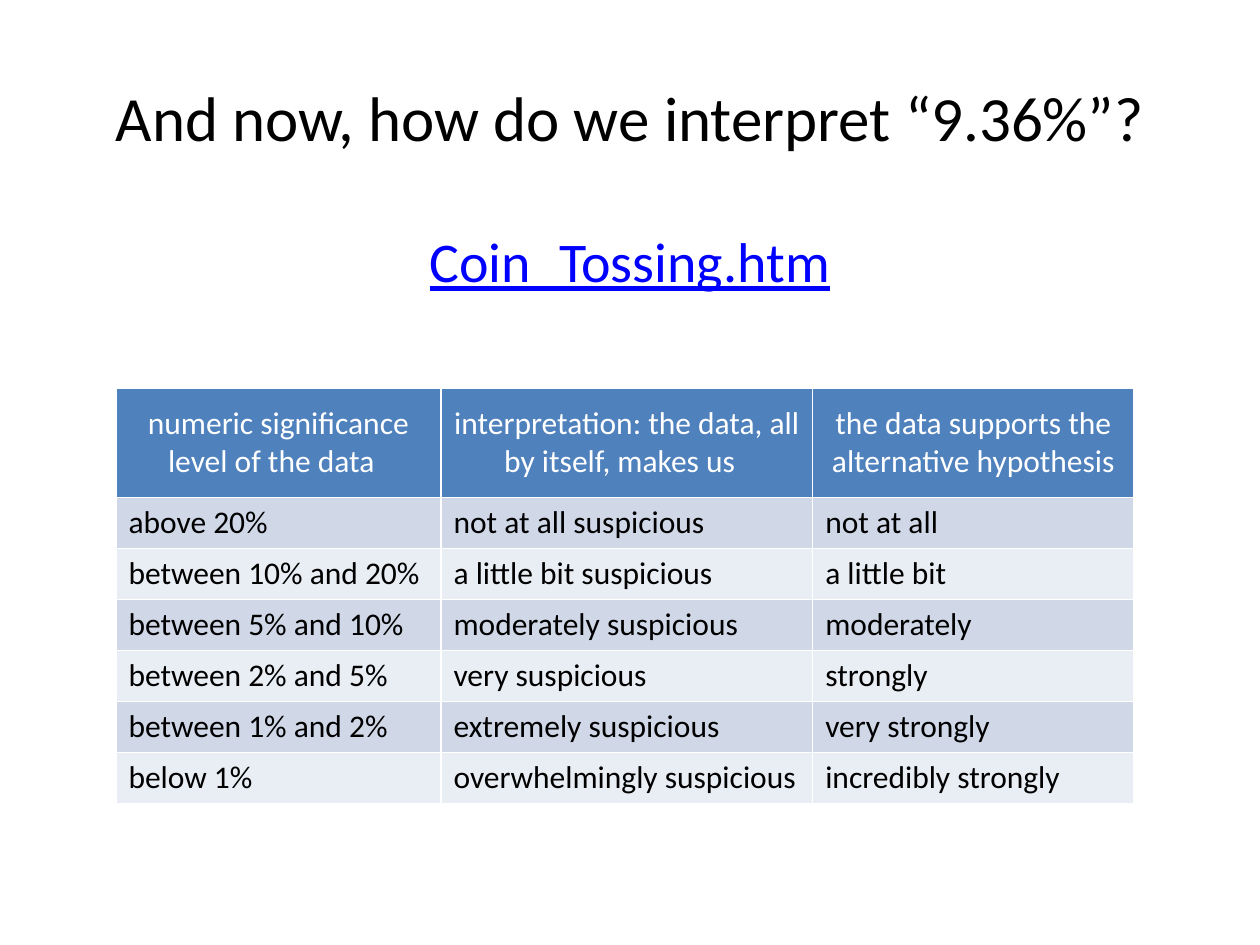
"""Build the slide on interpreting significance levels."""
from pptx import Presentation
from pptx.dml.color import RGBColor
from pptx.enum.text import MSO_ANCHOR, PP_ALIGN
from pptx.util import Inches, Pt

TITLE = "And now, how do we interpret “9.36%”?"
FILE_NAME = "Coin_Tossing.htm"
ROWS = [
    ("numeric significance level of the data  ",
     "interpretation: the data, all by itself, makes us  ",
     "the data supports the alternative hypothesis"),
    ("above 20%", "not at all suspicious", "not at all"),
    ("between 10% and 20%", "a little bit suspicious", "a little bit"),
    ("between 5% and 10%", "moderately suspicious", "moderately"),
    ("between 2% and 5%", "very suspicious", "strongly"),
    ("between 1% and 2%", "extremely suspicious", "very strongly"),
    ("below 1%", "overwhelmingly suspicious", "incredibly strongly"),
]
COLORS = {"text": "000000", "link": "0000FF", "header": "4F81BD",
          "header_text": "FFFFFF", "odd": "D0D8E8", "even": "E9EDF4"}
FONT = "Calibri"
WIDTH, HEIGHT, MARGIN = 10, 7.5, 0.5
TABLE_LEFT, TABLE_TOP = 0.92, 3.08
COLUMN_WIDTHS = (2.58, 2.95, 2.55)
HEADER_HEIGHT, ROW_HEIGHT = 0.87, 0.405


def write(frame, text, size, color, align, underline=None):
    """Put one formatted paragraph into a text frame."""
    frame.text = text
    para = frame.paragraphs[0]
    para.alignment = align
    font = para.runs[0].font
    font.name, font.size = FONT, Pt(size)
    font.bold, font.underline = False, underline
    font.color.rgb = RGBColor.from_string(COLORS[color])
    return para


def place(shape, top, height):
    """Span a shape between the side margins."""
    shape.left, shape.top = Inches(MARGIN), Inches(top)
    shape.width, shape.height = Inches(WIDTH - 2 * MARGIN), Inches(height)


def add_levels(page):
    """Add the table of significance levels."""
    heights = [HEADER_HEIGHT] + [ROW_HEIGHT] * (len(ROWS) - 1)
    table = page.shapes.add_table(
        len(ROWS), len(COLUMN_WIDTHS), Inches(TABLE_LEFT), Inches(TABLE_TOP),
        Inches(sum(COLUMN_WIDTHS)), Inches(sum(heights))).table
    for column, width in zip(table.columns, COLUMN_WIDTHS):
        column.width = Inches(width)
    for index, (row, height, texts) in enumerate(zip(table.rows, heights, ROWS)):
        row.height = Inches(height)
        if index == 0:
            fill, color, align = "header", "header_text", PP_ALIGN.CENTER
        else:
            fill, color, align = ("odd" if index % 2 else "even"), "text", PP_ALIGN.LEFT
        for cell, text in zip(row.cells, texts):
            cell.fill.solid()
            cell.fill.fore_color.rgb = RGBColor.from_string(COLORS[fill])
            cell.vertical_anchor = MSO_ANCHOR.MIDDLE
            write(cell.text_frame, text, 18, color, align)


def main():
    deck = Presentation()
    deck.slide_width, deck.slide_height = Inches(WIDTH), Inches(HEIGHT)
    page = deck.slides.add_slide(deck.slide_layouts[5])
    title = page.shapes.title
    place(title, 0.3, 1.25)
    title.text_frame.vertical_anchor = MSO_ANCHOR.MIDDLE
    write(title.text_frame, TITLE, 36, "text", PP_ALIGN.CENTER)
    box = page.shapes.add_textbox(0, 0, 0, 0)
    place(box, 1.75, 4.95)
    box.text_frame.word_wrap = True
    para = write(box.text_frame, FILE_NAME, 32, "link", PP_ALIGN.CENTER, True)
    para.space_before = Pt(6.4)
    add_levels(page)
    deck.save("out.pptx")


if __name__ == "__main__":
    main()
